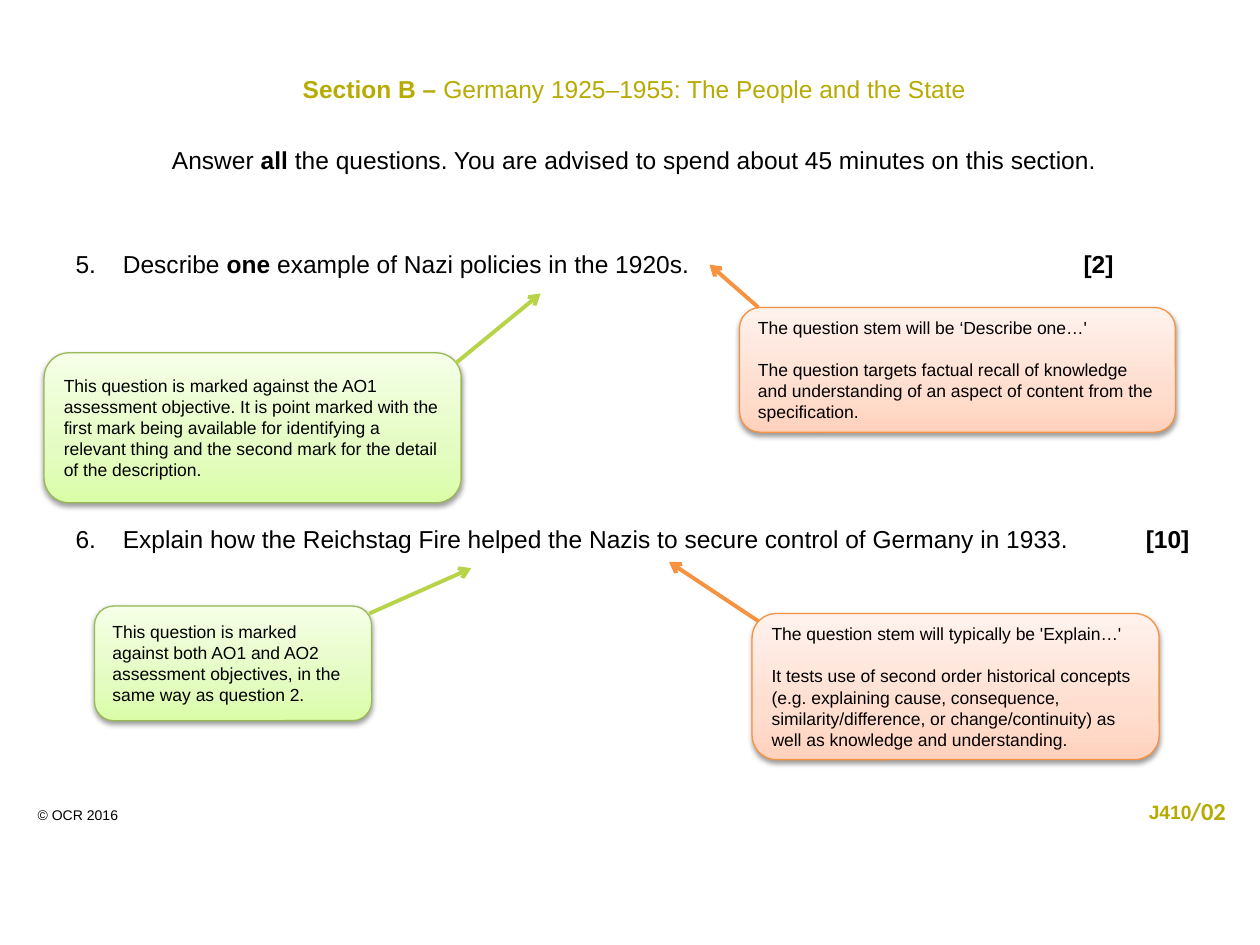
import copy

import pptx
import pptx.dml.color
import pptx.enum.shapes
import pptx.enum.text
import pptx.oxml
import pptx.oxml.ns
import pptx.util
from pptx.util import Pt

COLOURS = {"black": "000000", "olive": "B7AA00"}
CALLOUT_STYLES = {
    "content": {"stops": ["FFD2BD", "FFDED0", "FFF2ED"],
                "border": "F69240", "arrow": "F69240"},
    "marking": {"stops": ["DAFDA7", "E4FCC2", "F5FFE7"],
                "border": "98B955", "arrow": "B7D448"},
}
A_NS = pptx.oxml.ns.nsdecls("a")
SHADOW = (f'<a:effectLst {A_NS}><a:outerShdw blurRad="{Pt(3.1)}" dist="{Pt(1.6)}" '
          'dir="5400000" rotWithShape="0"><a:srgbClr val="000000">'
          '<a:alpha val="38000"/></a:srgbClr></a:outerShdw></a:effectLst>')


def rgb(hex_code):
    return pptx.dml.color.RGBColor.from_string(hex_code)


def add_run(paragraph, text, size, colour="black", bold=False, font="Arial"):
    run = paragraph.add_run()
    run.text = text
    run.font.name = font
    run.font.size = Pt(size)
    run.font.bold = bold
    run.font.color.rgb = rgb(COLOURS[colour])


deck = pptx.Presentation()
deck.slide_width, deck.slide_height = Pt(720), Pt(540)
slide = deck.slides.add_slide(deck.slide_layouts[1])
title = slide.shapes.title
title.element.getparent().remove(title.element)

# Section heading, instruction and questions
questions = slide.placeholders[1]
questions.left, questions.top = Pt(36), Pt(37.5)
questions.width, questions.height = Pt(653), Pt(414)
questions.text_frame.margin_top = Pt(5)
questions.text_frame.auto_size = pptx.enum.text.MSO_AUTO_SIZE.NONE
# Each line: space before, question number, mark position, runs
lines = [
    (0, None, None, [("Section B – ", "olive", True),
                     ("Germany 1925–1955: The People and the State", "olive", False)]),
    (23.3, None, None, [("Answer ", "black", False), ("all ", "black", True),
                        ("the questions. You are advised to spend about 45 minutes "
                         "on this section.", "black", False)]),
    (42.8, 5, 576, [("Describe ", "black", False), ("one", "black", True),
                    (" example of Nazi policies in the 1920s.\t", "black", False),
                    ("[2]", "black", True)]),
    (140.5, 6, 612, [("Explain how the Reichstag Fire helped the Nazis to secure "
                      "control of Germany in 1933.\t", "black", False),
                     ("[10]", "black", True)]),
]
for index, (space, number, mark_position, runs) in enumerate(lines):
    frame = questions.text_frame
    line = frame.paragraphs[0] if index == 0 else frame.add_paragraph()
    properties = line._p.get_or_add_pPr()
    line.space_before = Pt(space)
    if number:
        properties.set("marL", str(Pt(27)))
        properties.set("indent", str(Pt(-27)))
        bullet = f'<a:buAutoNum {A_NS} type="arabicPeriod" startAt="{number}"/>'
        tabs = f'<a:tabLst {A_NS}><a:tab pos="{Pt(mark_position)}" algn="l"/></a:tabLst>'
        properties.append(pptx.oxml.parse_xml(bullet))
        properties.append(pptx.oxml.parse_xml(tabs))
    else:
        properties.set("marL", "0")
        properties.set("indent", "0")
        properties.append(pptx.oxml.parse_xml(f"<a:buNone {A_NS}/>"))
        line.alignment = pptx.enum.text.PP_ALIGN.CENTER
    for text, colour, bold in runs:
        add_run(line, text, 14, colour, bold)

# Callouts: style, box, arrow start and end, paragraphs
callouts = [
    ("content", (422.6, 175.7, 249.1, 71.3), (433.4, 175.7, 405.4, 151.2),
     ["The question stem will be ‘Describe one…'",
      "The question targets factual recall of knowledge and understanding of an "
      "aspect of content from the specification."]),
    ("content", (429.8, 350.6, 232.6, 83.5), (433.4, 355, 382.3, 321.1),
     ["The question stem will typically be 'Explain…'",
      "It tests use of second order historical concepts (e.g. explaining cause, "
      "consequence, similarity/difference, or change/continuity) as well as "
      "knowledge and understanding."]),
    ("marking", (25.2, 201.6, 238.3, 85.7), (260.6, 207.4, 308.9, 167.8),
     ["This question is marked against the AO1 assessment objective. It is point "
      "marked with the first mark being available for identifying a relevant thing "
      "and the second mark for the detail of the description."]),
    ("marking", (54, 346.3, 158.4, 65.5), (211, 350.6, 269.3, 324.7),
     ["This question is marked against both AO1 and AO2 assessment objectives, "
      "in the same way as question 2."]),
]
for style_name, box, arrow_ends, paragraphs in callouts:
    style = CALLOUT_STYLES[style_name]
    callout = slide.shapes.add_shape(
        pptx.enum.shapes.MSO_SHAPE.ROUNDED_RECTANGLE, *map(Pt, box))
    callout.fill.gradient()
    callout.fill.gradient_angle = 90
    stop_list = callout.element.spPr.find(".//" + pptx.oxml.ns.qn("a:gsLst"))
    stop_list.append(copy.deepcopy(stop_list[-1]))
    for stop, position, colour in zip(
            callout.fill.gradient_stops, (0, 0.35, 1), style["stops"]):
        stop.position = position
        stop.color.rgb = rgb(colour)
    callout.line.color.rgb = rgb(style["border"])
    callout.line.width = Pt(0.75)
    callout.element.spPr.append(pptx.oxml.parse_xml(SHADOW))
    frame = callout.text_frame
    frame.word_wrap = True
    frame.vertical_anchor = pptx.enum.text.MSO_ANCHOR.MIDDLE
    for index, text in enumerate(paragraphs):
        note = frame.paragraphs[0] if index == 0 else frame.add_paragraph()
        note.alignment = pptx.enum.text.PP_ALIGN.LEFT
        note.space_before = Pt(12 * index)
        add_run(note, text, 10)

    arrow = slide.shapes.add_connector(
        pptx.enum.shapes.MSO_CONNECTOR.STRAIGHT, *map(Pt, arrow_ends))
    arrow.line.color.rgb = rgb(style["arrow"])
    arrow.line.width = Pt(2.25)
    arrow.line._get_or_add_ln().append(
        pptx.oxml.parse_xml(f'<a:tailEnd {A_NS} type="arrow"/>'))
    arrow.element.spPr.append(pptx.oxml.parse_xml(f"<a:effectLst {A_NS}/>"))

# Footer: copyright line and paper code
footers = [
    ("© OCR 2016", (14.4, 457.2, 136, 17.3), 8, "black", False, "Arial"),
    ("J410", (649.4, 453.6, 45.4, 20.9), 11, "olive", True, "Arial"),
    ("/02", (673.2, 451.4, 39.6, 24.5), 14, "olive", True, "Calibri"),
]
for text, box, size, colour, bold, font in footers:
    footer = slide.shapes.add_textbox(*map(Pt, box))
    footer.text_frame.word_wrap = True
    add_run(footer.text_frame.paragraphs[0], text, size, colour, bold, font)

deck.save("out.pptx")
